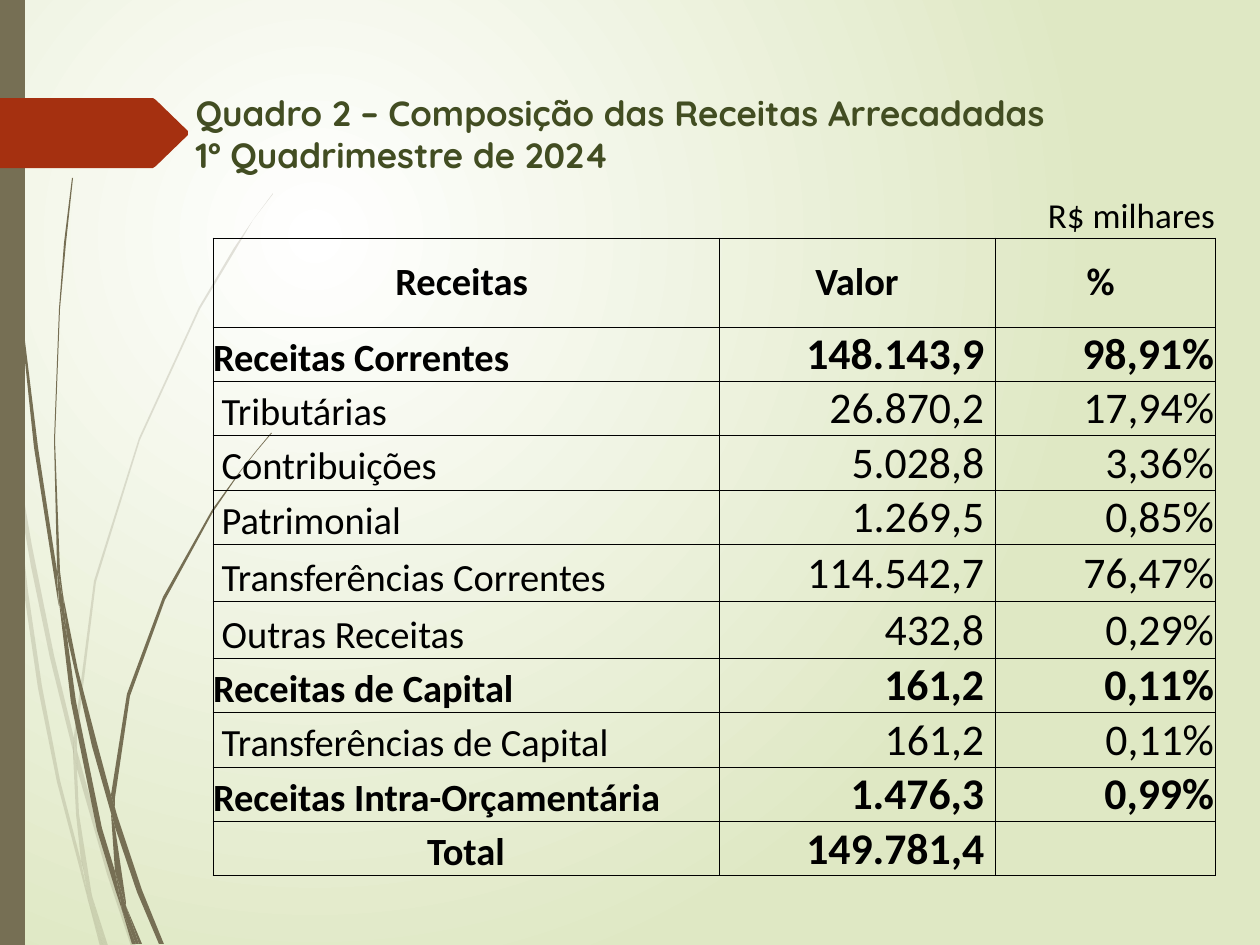
from lxml import etree
from pptx import Presentation
from pptx import util as u
from pptx.dml.color import RGBColor
from pptx.enum import shapes, text
from pptx.oxml import ns

EMU_PER_PX = 914400 / 126
WHITE = RGBColor(0xFF, 0xFF, 0xFF)
BLACK = RGBColor(0x00, 0x00, 0x00)
PALE_GREEN = RGBColor(0xDF, 0xE8, 0xC4)
OLIVE = RGBColor(0x42, 0x4D, 0x22)
BROWN = RGBColor(0x76, 0x6F, 0x54)
RUST = RGBColor(0xA5, 0x30, 0x10)

PALE_BLADES = [
    [(10, 441), (8, 406), (0, 355), (0, 377), (9, 433)],
    [(50, 658), (74, 755), (74, 738), (54, 655), (32, 546), (13, 435),
     (15, 474), (31, 566)],
    [(81, 765), (77, 751), (77, 769), (107, 874), (131, 946), (136, 946),
     (111, 872)],
    [(105, 946), (108, 946), (92, 896)],
    [(81, 861), (60, 780), (42, 686), (28, 591), (15, 474), (10, 441),
     (24, 592), (38, 688), (57, 782), (81, 873), (88, 900), (87, 891)],
    [(73, 755), (76, 814), (81, 861), (84, 872), (92, 896), (91, 890),
     (79, 814), (77, 769), (77, 766)],
    [(77, 736), (96, 582), (140, 440), (200, 309), (236, 249), (253, 220),
     (273, 194), (273, 193), (253, 220), (234, 248), (199, 307), (139, 438),
     (94, 581), (74, 736), (74, 738), (77, 751)],
    [(88, 900), (100, 946), (103, 946)],
    [(77, 766), (77, 769), (77, 751), (74, 738), (73, 755)],
    [(84, 872), (82, 861), (87, 891), (88, 900), (103, 946), (105, 946),
     (92, 896)],
]
DARK_BLADES = [
    [(6, 139), (18, 294), (34, 447), (58, 601), (59, 606), (57, 576),
     (57, 571), (38, 447), (19, 292), (8, 137), (5, 60), (4, 0), (3, 0),
     (4, 60)],
    [(92, 746), (111, 813), (111, 798), (111, 795), (97, 743), (78, 670),
     (63, 595), (67, 636)],
    [(118, 818), (115, 808), (115, 827), (137, 892), (159, 944), (164, 944),
     (142, 890)],
    [(115, 871), (102, 828), (76, 701), (67, 636), (59, 601), (71, 702),
     (97, 830), (116, 892), (122, 910), (121, 903)],
    [(63, 595), (60, 571), (55, 440), (60, 309), (66, 243), (73, 178),
     (72, 178), (64, 243), (59, 309), (54, 440), (57, 566), (62, 595)],
    [(139, 944), (142, 944), (126, 906)],
    [(59, 601), (67, 636), (63, 595), (62, 595), (57, 566), (57, 571)],
    [(115, 798), (130, 696), (165, 600), (213, 512), (241, 471), (256, 452),
     (272, 433), (271, 433), (256, 451), (241, 470), (212, 510), (163, 597),
     (127, 694), (111, 795), (115, 808)],
    [(122, 910), (132, 944), (136, 944)],
    [(111, 813), (115, 871), (121, 890), (126, 906), (126, 902), (115, 827),
     (113, 820)],
    [(111, 813), (113, 820), (115, 827), (115, 808), (111, 795), (111, 798)],
    [(121, 890), (115, 871), (121, 903), (122, 910), (136, 944), (139, 944),
     (126, 906)],
]
ARROW = [(0, 98), (153, 98), (156, 100), (188, 131), (188, 135), (156, 166),
         (153, 168), (0, 168)]

COLUMN_WIDTHS = [506, 57, 219, 220]
ROW_HEIGHTS = [42, 89, 38, 53, 53, 53, 57, 57, 53, 53, 53, 53]
REVENUES = [
    ("Receitas Correntes", "148.143,9 ", "98,91%", True),
    (" Tributárias", "26.870,2 ", "17,94%", False),
    (" Contribuições", "5.028,8 ", "3,36%", False),
    (" Patrimonial", "1.269,5 ", "0,85%", False),
    (" Transferências Correntes", "114.542,7 ", "76,47%", False),
    (" Outras Receitas", "432,8 ", "0,29%", False),
    ("Receitas de Capital", "161,2 ", "0,11%", True),
    (" Transferências de Capital", "161,2 ", "0,11%", False),
    ("Receitas Intra-Orçamentária", "1.476,3 ", "0,99%", True),
    ("Total", "149.781,4 ", "", True),
]
LEFT, CENTER, RIGHT = (text.PP_ALIGN.LEFT, text.PP_ALIGN.CENTER,
                       text.PP_ALIGN.RIGHT)
MIDDLE, BOTTOM = text.MSO_ANCHOR.MIDDLE, text.MSO_ANCHOR.BOTTOM


def px(length):
    return u.Emu(round(length * EMU_PER_PX))


def apply(target, values):
    for name, value in values.items():
        setattr(target, name, value)


def paint_background(slide):
    fill = slide.background.fill
    fill.gradient()
    for stop, color in zip(fill.gradient_stops, (WHITE, PALE_GREEN)):
        stop.color.rgb = color
    gradient = slide.element.find(".//" + ns.qn("a:gradFill"))
    gradient.remove(gradient.find(ns.qn("a:lin")))
    circle = etree.SubElement(gradient, ns.qn("a:path"), path="circle")
    etree.SubElement(circle, ns.qn("a:fillToRect"),
                     l="50000", t="50000", r="100000", b="100000")


def paint(shape, color, opacity=100):
    shape.shadow.inherit = False
    shape.line.fill.background()
    shape.fill.solid()
    shape.fill.fore_color.rgb = color
    if opacity < 100:
        tint = shape.fill._xPr.find(".//" + ns.qn("a:srgbClr"))
        etree.SubElement(tint, ns.qn("a:alpha"), val=str(opacity * 1000))


def add_outline(parent, points, color, opacity=100):
    corners = [(px(x), px(y)) for x, y in points]
    builder = parent.shapes.build_freeform(*corners[0])
    builder.add_line_segments(corners[1:], close=True)
    paint(builder.convert_to_shape(), color, opacity)


def add_grass(slide, blades, opacity):
    tuft = slide.shapes.add_group_shape()
    for blade in blades:
        add_outline(tuft, blade, BROWN, opacity)


def add_side_bar(slide):
    bar = slide.shapes.add_shape(shapes.MSO_SHAPE.RECTANGLE,
                                 0, 0, px(25), px(945))
    paint(bar, BROWN)


def write_title(slide):
    title = slide.shapes.title
    apply(title, {"left": px(183), "top": px(85),
                  "width": px(1132), "height": px(63)})
    frame = title.text_frame
    frame.text = ("Quadro 2 – Composição das Receitas Arrecadadas "
                  "\v1º Quadrimestre de 2024")
    apply(frame, {"word_wrap": True, "auto_size": text.MSO_AUTO_SIZE.NONE,
                  "vertical_anchor": text.MSO_ANCHOR.TOP})
    heading = frame.paragraphs[0]
    heading.alignment = LEFT
    for run in heading.runs:
        apply(run.font, {"name": "Quicksand", "size": u.Pt(20), "bold": True})
        run.font.color.rgb = OLIVE


def write_cell(cell, words, size, bold, align, anchor, inset=0):
    apply(cell, {"vertical_anchor": anchor, "margin_left": px(inset),
                 "margin_right": px(inset), "margin_top": px(inset)})
    paragraph = cell.text_frame.paragraphs[0]
    paragraph.alignment = align
    run = paragraph.add_run()
    run.text = words
    apply(run.font, {"name": "Calibri", "size": u.Pt(size), "bold": bold})
    run.font.color.rgb = BLACK


def set_borders(cell, visible):
    properties = cell._tc.get_or_add_tcPr()
    for position, side in enumerate(("lnL", "lnR", "lnT", "lnB")):
        line = etree.Element(ns.qn("a:" + side), w=str(u.Pt(0.5)))
        if side in visible:
            ink = etree.SubElement(line, ns.qn("a:solidFill"))
            etree.SubElement(ink, ns.qn("a:srgbClr"), val=str(BLACK))
        else:
            etree.SubElement(line, ns.qn("a:noFill"))
        properties.insert(position, line)


def add_revenue_table(slide):
    table = slide.shapes.add_table(
        len(ROW_HEIGHTS), len(COLUMN_WIDTHS), px(213), px(195),
        px(sum(COLUMN_WIDTHS)), px(sum(ROW_HEIGHTS))).table
    apply(table, {"first_row": False, "horz_banding": False})
    for column, width in zip(table.columns, COLUMN_WIDTHS):
        column.width = px(width)
    for index, (row, height) in enumerate(zip(table.rows, ROW_HEIGHTS)):
        row.height = px(height)
        for cell in row.cells:
            apply(cell, {"margin_left": 0, "margin_right": 0,
                         "margin_top": 0, "margin_bottom": 0})
            cell.fill.background()
            set_borders(cell, ("lnL", "lnR", "lnT", "lnB") if index
                        else ("lnB",))
        if index:
            table.cell(index, 1).merge(table.cell(index, 2))

    write_cell(table.cell(0, 3), "R$ milhares", 20, False, RIGHT, BOTTOM)
    for column, heading in ((0, "Receitas "), (1, "Valor"), (3, "% ")):
        write_cell(table.cell(1, column), heading, 22, True, CENTER, MIDDLE)
    for index, (source, value, share, bold) in enumerate(REVENUES, start=2):
        align = CENTER if source == "Total" else LEFT
        write_cell(table.cell(index, 0), source, 22, bold, align, BOTTOM)
        for column, figure in ((1, value), (3, share)):
            if figure:
                write_cell(table.cell(index, column), figure, 25, bold, RIGHT,
                           MIDDLE, inset=1)


def main():
    deck = Presentation()
    apply(deck, {"slide_width": px(1260), "slide_height": px(945)})
    slide = deck.slides.add_slide(deck.slide_layouts[5])
    paint_background(slide)
    add_grass(slide, PALE_BLADES, 20)
    add_grass(slide, DARK_BLADES, 100)
    add_side_bar(slide)
    add_outline(slide, ARROW, RUST)
    write_title(slide)
    add_revenue_table(slide)
    deck.save("out.pptx")


if __name__ == "__main__":
    main()
